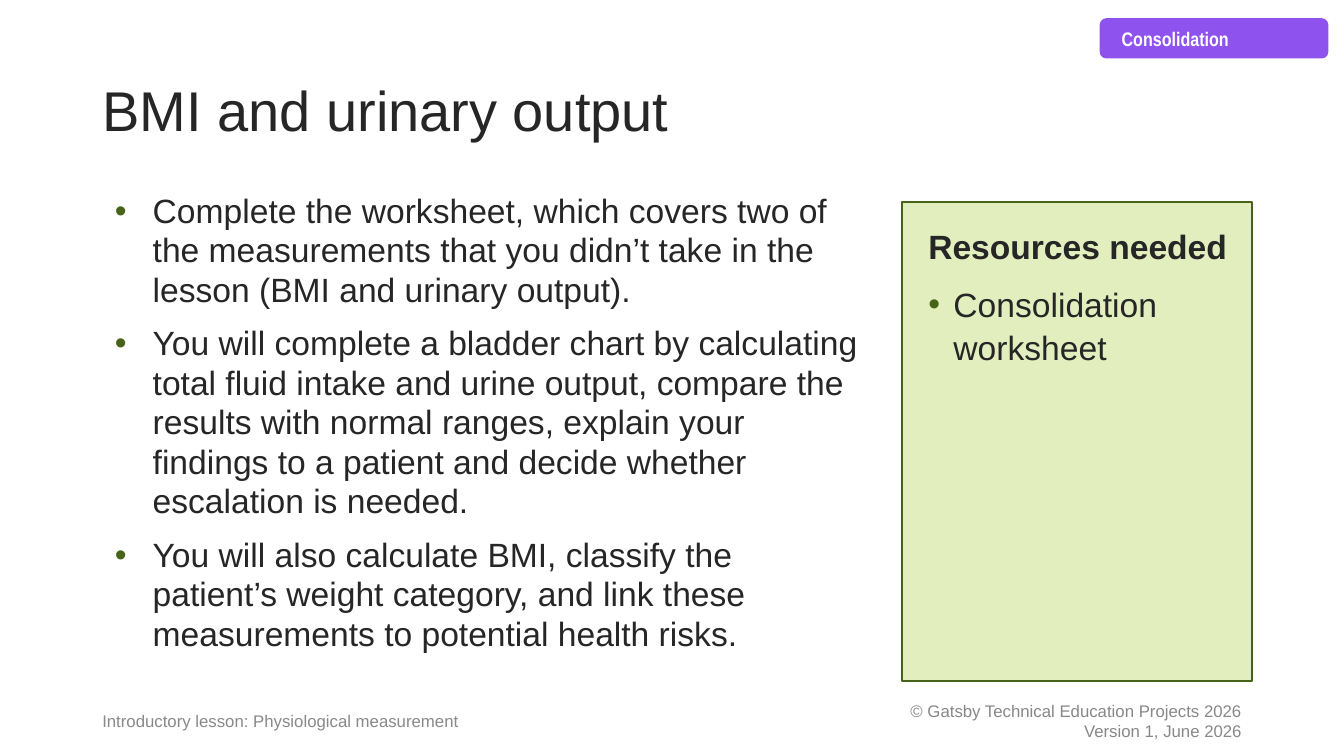
from dataclasses import dataclass

from lxml import etree
from pptx import Presentation
from pptx.dml.color import RGBColor
from pptx.enum.shapes import MSO_SHAPE
from pptx.enum.text import MSO_ANCHOR, PP_ALIGN
from pptx.oxml.ns import qn
from pptx.util import Pt

TOP, MIDDLE = MSO_ANCHOR.TOP, MSO_ANCHOR.MIDDLE
LEFT, RIGHT = PP_ALIGN.LEFT, PP_ALIGN.RIGHT
RECT, TAG = MSO_SHAPE.RECTANGLE, MSO_SHAPE.FLOWCHART_ALTERNATE_PROCESS


@dataclass(frozen=True)
class Theme:
    ink: str = "262626"
    green: str = "466318"
    pale_green: str = "E2EEBE"
    purple: str = "8E53EF"
    white: str = "FFFFFF"
    footer: str = "898989"
    copyright: str = "888888"
    font: str = "Arial"
    narrow: str = "Arial Narrow"
    title_size: int = 40
    body_size: int = 24
    tag_size: int = 14
    footer_size: int = 12


THEME = Theme()

TASKS = [
    "Complete the worksheet, which covers two of the measurements that you "
    "didn’t take in the lesson (BMI and urinary output).",
    "You will complete a bladder chart by calculating total fluid intake and "
    "urine output, compare the results with normal ranges, explain your "
    "findings to a patient and decide whether escalation is needed.",
    "You will also calculate BMI, classify the patient’s weight category, "
    "and link these measurements to potential health risks.",
]


def rgb(value):
    return RGBColor.from_string(value)


def place(sp, left, top, width, height):
    sp.left, sp.top, sp.width, sp.height = map(Pt, (left, top, width, height))


def write(tf, lines, size, color, font=THEME.font, bold=False,
          align=LEFT, anchor=TOP, spacing=1.0):
    tf.word_wrap = True
    tf.vertical_anchor = anchor
    tf.text = "\n".join(lines)
    for p in tf.paragraphs:
        p.alignment = align
        p.line_spacing = spacing
        for r in p.runs:
            r.font.name = font
            r.font.size = Pt(size)
            r.font.bold = bold
            r.font.color.rgb = rgb(color)


def indent(p, margin, hanging=0):
    pPr = p._p.get_or_add_pPr()
    pPr.set("marL", str(Pt(margin)))
    pPr.set("indent", str(Pt(-hanging)))
    return pPr


def bullet(p, margin, hanging):
    pPr = indent(p, margin, hanging)
    color = etree.SubElement(pPr, qn("a:buClr"))
    etree.SubElement(color, qn("a:srgbClr"), val=THEME.green)
    etree.SubElement(pPr, qn("a:buFont"), typeface=THEME.font)
    etree.SubElement(pPr, qn("a:buChar"), char="•")


def add_text(slide, box, lines, size, color, **style):
    sp = slide.shapes.add_textbox(*map(Pt, box))
    write(sp.text_frame, lines, size, color, **style)
    return sp.text_frame


def add_box(slide, kind, box, fill, line=None):
    sp = slide.shapes.add_shape(kind, *map(Pt, box))
    sp.shadow.inherit = False
    sp.fill.solid()
    sp.fill.fore_color.rgb = rgb(fill)
    if line:
        sp.line.color.rgb = rgb(line)
        sp.line.width = Pt(1.5)
    else:
        sp.line.fill.background()
    return sp


def add_title(slide, text):
    title = slide.shapes.title
    place(title, 66, 28.8, 828, 104.4)
    write(title.text_frame, [text], THEME.title_size, THEME.ink,
          anchor=MIDDLE, spacing=0.9)


def add_footers(slide):
    add_text(slide, (66, 500.4, 331.2, 28.8),
             ["Introductory lesson: Physiological measurement"],
             THEME.footer_size, THEME.footer, anchor=MIDDLE)
    add_text(slide, (570.2, 500.4, 324, 28.8),
             ["© Gatsby Technical Education Projects 2026",
              "Version 1, June 2026"],
             THEME.footer_size, THEME.copyright, align=RIGHT, anchor=MIDDLE)


def add_tasks(slide):
    tf = add_text(slide, (66, 133.2, 555.8, 353.5), TASKS,
                  THEME.body_size, THEME.ink, spacing=0.98)
    for i, p in enumerate(tf.paragraphs):
        bullet(p, 36, 27)
        if i:
            p.space_before = Pt(10)


def add_tag(slide, text):
    sp = add_box(slide, TAG, (785.5, 13, 163.4, 28.8), THEME.purple)
    write(sp.text_frame, [text], THEME.tag_size, THEME.white,
          font=THEME.narrow, bold=True, spacing=1.08)
    indent(sp.text_frame.paragraphs[0], 7.2)


def add_resources(slide):
    tf = add_text(slide, (656, 155.5, 249.8, 342.7),
                  ["Resources needed", "Consolidation worksheet"],
                  THEME.body_size, THEME.ink, spacing=1.08)
    heading, item = tf.paragraphs
    heading.runs[0].font.bold = True
    bullet(item, 18, 18)
    item.space_before = Pt(10)


def main():
    prs = Presentation()
    prs.slide_width, prs.slide_height = Pt(960), Pt(540)
    slide = prs.slides.add_slide(prs.slide_layouts[5])
    add_footers(slide)
    add_box(slide, RECT, (644.4, 144, 249.8, 342.7),
            THEME.pale_green, THEME.green)
    add_title(slide, "BMI and urinary output")
    add_tasks(slide)
    add_tag(slide, "Consolidation")
    add_resources(slide)
    prs.save("out.pptx")


if __name__ == "__main__":
    main()
